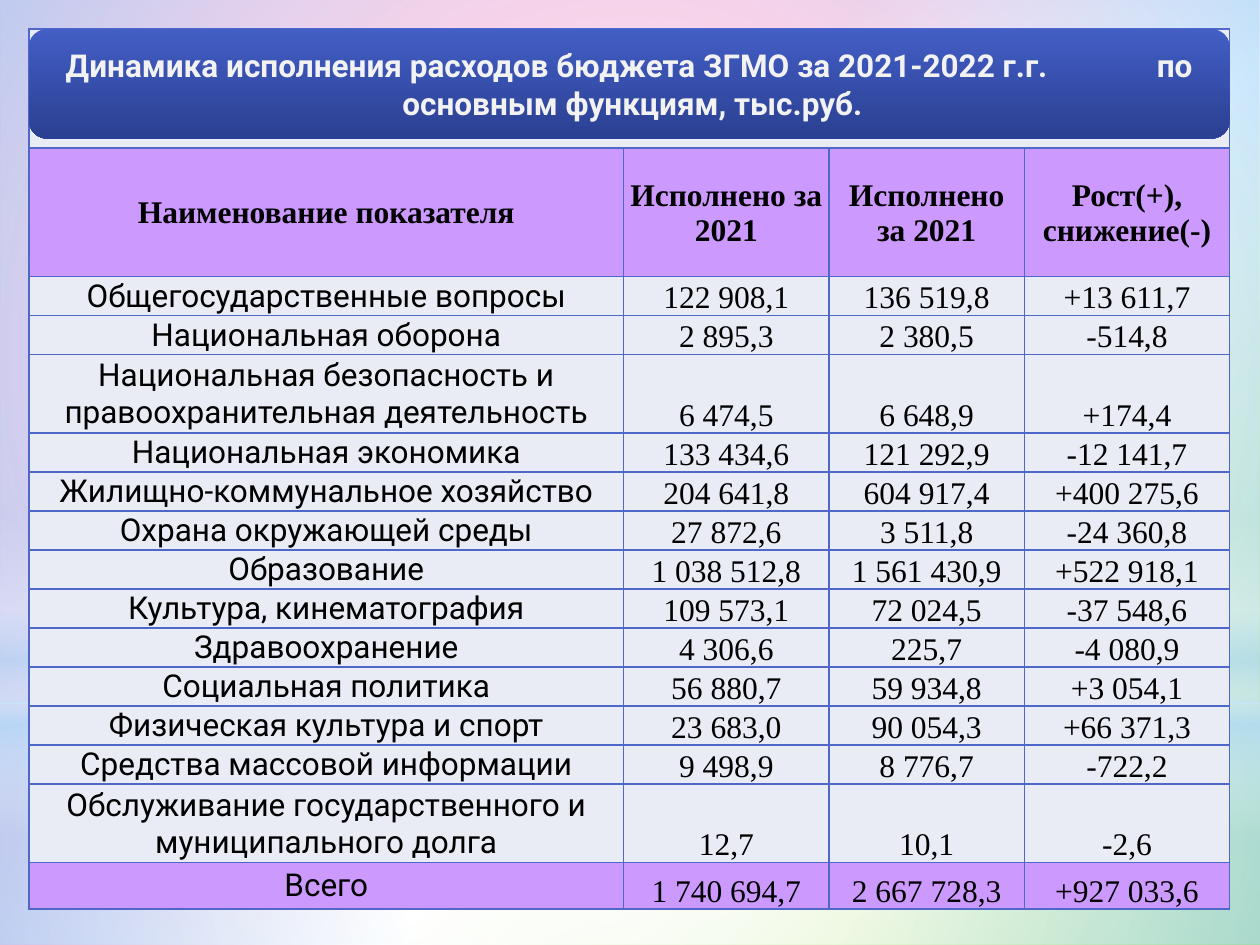
from lxml.etree import SubElement
from pptx import Presentation
from pptx.dml.color import RGBColor
from pptx.enum.shapes import MSO_SHAPE
from pptx.enum.text import MSO_ANCHOR, PP_ALIGN
from pptx.oxml import parse_xml
from pptx.oxml.ns import nsdecls, qn
from pptx.util import Inches, Pt

COLORS = {
    "white": "FFFFFF", "sky": "B4DCFA", "pink": "EA8AC8", "green": "81D31A",
    "border": "4E67C8", "cell": "E9EBF5", "accent": "CC99FF", "text": "000000",
    "title": "F2F2F2", "title_top": "435EC5", "title_bottom": "2B4092",
}
W, H = 10, 7.5
ROW = 0.31
TABLE_X, TABLE_Y = 0.23, 0.23
COLS = [4.72, 1.63, 1.55, 1.63]
HEADER = ["Наименование показателя", "Исполнено за 2021", "Исполнено\nза 2021", "Рост(+), снижение(-)"]
DATA = [
    ("Общегосударственные вопросы", "122 908,1", "136 519,8", "+13 611,7"),
    ("Национальная оборона", "2 895,3", "2 380,5", "-514,8"),
    ("Национальная безопасность и правоохранительная деятельность", "6 474,5", "6 648,9", "+174,4"),
    ("Национальная экономика", "133 434,6", "121 292,9", "-12 141,7"),
    ("Жилищно-коммунальное хозяйство", "204 641,8", "604 917,4", "+400 275,6"),
    ("Охрана окружающей среды", "27 872,6", "3 511,8", "-24 360,8"),
    ("Образование", "1 038 512,8", "1 561 430,9", "+522 918,1"),
    ("Культура, кинематография", "109 573,1", "72 024,5", "-37 548,6"),
    ("Здравоохранение", "4 306,6", "225,7", "-4 080,9"),
    ("Социальная политика", "56 880,7", "59 934,8", "+3 054,1"),
    ("Физическая культура и спорт", "23 683,0", "90 054,3", "+66 371,3"),
    ("Средства массовой информации", "9 498,9", "8 776,7", "-722,2"),
    ("Обслуживание государственного и муниципального долга", "12,7", "10,1", "-2,6"),
    ("Всего", "1 740 694,7", "2 667 728,3", "+927 033,6"),
]
TITLE_ROWS = 3
HEAD = TITLE_ROWS
LAST = HEAD + len(DATA)
HEIGHTS = {HEAD: 1.02, HEAD + 3: 2 * ROW, LAST - 1: 2 * ROW, LAST: 0.37}


def set_gradient(obj, fill, stops, angle=None):
    fill.solid()
    old = next(obj.element.iter(qn("a:solidFill")))
    gs = "".join(
        f'<a:gs pos="{pos * 1000}"><a:srgbClr val="{COLORS[name]}">'
        f'<a:alpha val="{alpha * 1000}"/></a:srgbClr></a:gs>'
        for pos, name, alpha in stops
    )
    if angle is None:
        shade = '<a:path path="circle"><a:fillToRect l="50000" t="50000" r="50000" b="50000"/></a:path>'
    else:
        shade = f'<a:lin ang="{angle * 60000}" scaled="0"/>'
    xml = f'<a:gradFill {nsdecls("a")} rotWithShape="1"><a:gsLst>{gs}</a:gsLst>{shade}</a:gradFill>'
    old.getparent().replace(old, parse_xml(xml))


def style_paragraph(p, font, color, bold):
    p.font.size = Pt(18)
    p.font.name = font
    p.font.bold = bold
    p.font.color.rgb = RGBColor.from_string(COLORS[color])


prs = Presentation()
prs.slide_width, prs.slide_height = Inches(W), Inches(H)
s = prs.slides.add_slide(prs.slide_layouts[6])
set_gradient(s, s.background.fill, [
    (0, "pink", 100), (39, "pink", 100), (60, "white", 100), (100, "green", 100)], 45)

BACKDROP = [
    (MSO_SHAPE.RECTANGLE, 5.58, 1.92, None, [(0, "white", 91), (37, "white", 76), (100, "sky", 79)]),
    (MSO_SHAPE.RECTANGLE, 0, 5.58, None, [(0, "white", 89), (48, "white", 62), (100, "sky", 79)]),
    (MSO_SHAPE.RECTANGLE, 4.12, 2.5, 90, [
        (0, "white", 0), (29, "white", 30), (45, "sky", 40),
        (55, "white", 26), (65, "sky", 60), (100, "white", 0)]),
    (MSO_SHAPE.OVAL, 1.75, 5.58, None, [(0, "white", 100), (56, "white", 0)]),
]
for kind, top, height, angle, stops in BACKDROP:
    sp = s.shapes.add_shape(kind, 0, Inches(top), Inches(W), Inches(height))
    sp.shadow.inherit = False
    sp.line.fill.background()
    set_gradient(sp, sp.fill, stops, angle)

heights = [HEIGHTS.get(i, ROW) for i in range(LAST + 1)]
table = s.shapes.add_table(
    len(heights), len(COLS), Inches(TABLE_X), Inches(TABLE_Y),
    Inches(sum(COLS)), Inches(sum(heights))).table
table.first_row = table.horz_banding = False
for col, width in zip(table.columns, COLS):
    col.width = Inches(width)
for row, height in zip(table.rows, heights):
    row.height = Inches(height)

rows = [[""] * len(COLS)] * TITLE_ROWS + [HEADER] + DATA
for i, texts in enumerate(rows):
    for j, text in enumerate(texts):
        cell = table.cell(i, j)
        cell.margin_left = cell.margin_right = cell.margin_top = Inches(0.01)
        cell.margin_bottom = 0
        tcPr = cell._tc.get_or_add_tcPr()
        for side in ("lnL", "lnR", "lnT", "lnB"):
            ln = SubElement(tcPr, qn(f"a:{side}"), w=str(Pt(1)))
            SubElement(SubElement(ln, qn("a:solidFill")), qn("a:srgbClr"), val=COLORS["border"])
        cell.fill.solid()
        cell.fill.fore_color.rgb = RGBColor.from_string(COLORS["accent" if i in (HEAD, LAST) else "cell"])
        if i < TITLE_ROWS:
            continue
        cell.vertical_anchor = MSO_ANCHOR.MIDDLE if i == HEAD or j == 0 else MSO_ANCHOR.BOTTOM
        cell.text_frame.text = text
        for p in cell.text_frame.paragraphs:
            p.alignment = PP_ALIGN.CENTER
            style_paragraph(p, "Roboto" if i > HEAD and j == 0 else "Times New Roman", "text", i == HEAD)
for i in range(TITLE_ROWS):
    table.cell(i, 0).merge(table.cell(i, len(COLS) - 1))

sp = s.shapes.add_shape(
    MSO_SHAPE.ROUNDED_RECTANGLE, Inches(TABLE_X), Inches(TABLE_Y), Inches(sum(COLS)), Inches(0.87))
sp.shadow.inherit = False
sp.line.fill.background()
set_gradient(sp, sp.fill, [(0, "title_top", 100), (100, "title_bottom", 100)], 90)
tf = sp.text_frame
tf.word_wrap = True
tf.vertical_anchor = MSO_ANCHOR.MIDDLE
tf.margin_left, tf.margin_right = Inches(0.25), Inches(0.2)
tf.text = "Динамика исполнения расходов бюджета ЗГМО за 2021-2022 г.г.\tпо\nосновным функциям, тыс.руб."
for p, align in zip(tf.paragraphs, (PP_ALIGN.LEFT, PP_ALIGN.CENTER)):
    p.alignment = align
    style_paragraph(p, "Roboto", "title", True)
pPr = tf.paragraphs[0]._p.get_or_add_pPr()
pPr.insert(0, parse_xml(
    f'<a:tabLst {nsdecls("a")}><a:tab pos="{Inches(8.66)}" algn="l"/></a:tabLst>'))

prs.save("out.pptx")
